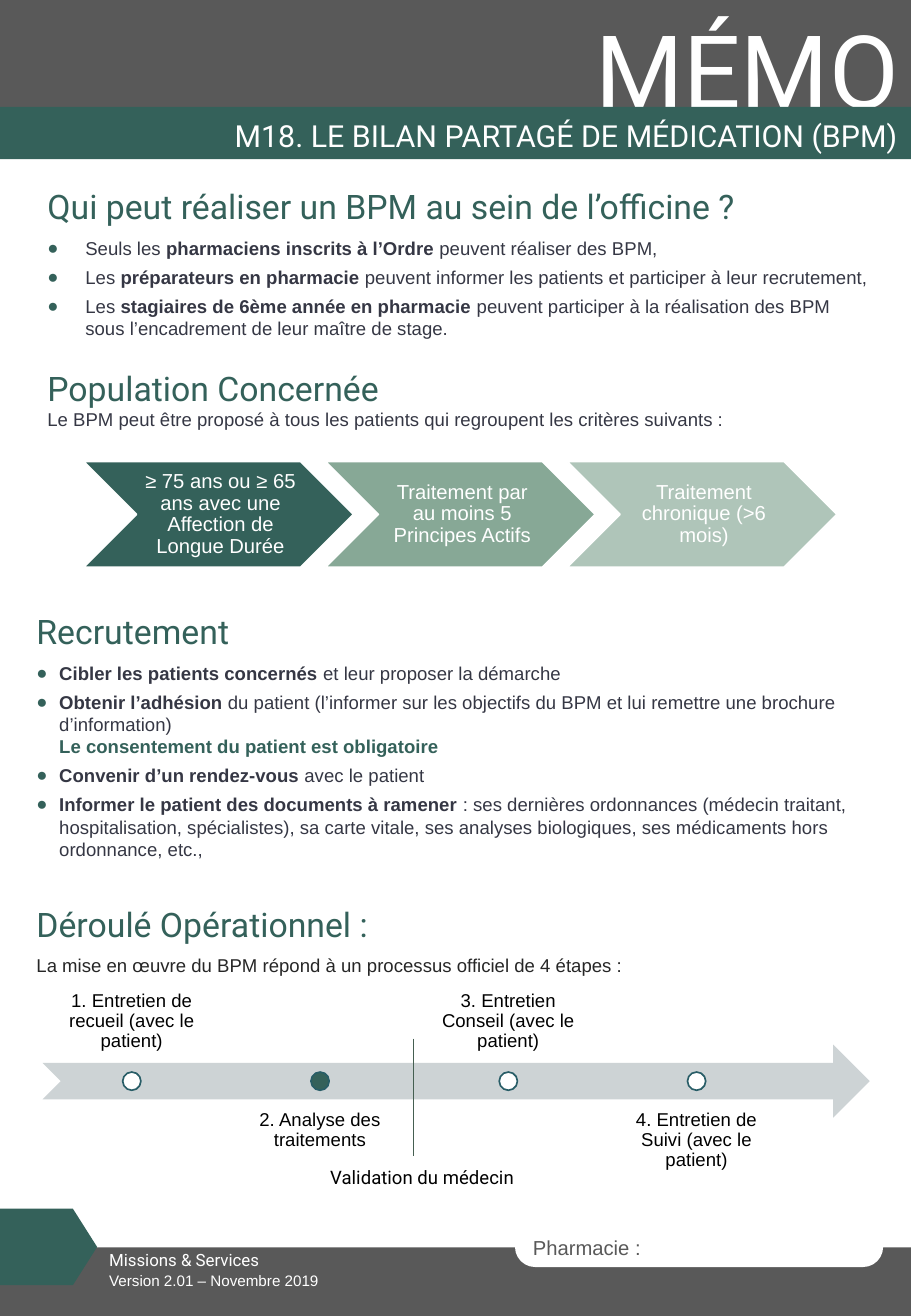
import pptx
import pptx.util
import pptx.dml.color
import pptx.enum.shapes
import pptx.enum.text
import pptx.oxml.ns
import lxml.etree

Pt = pptx.util.Pt
SHAPE = pptx.enum.shapes.MSO_SHAPE
ALIGN = pptx.enum.text.PP_ALIGN
ANCHOR = pptx.enum.text.MSO_ANCHOR
qn = pptx.oxml.ns.qn

COLORS = {
    "green": "34615A", "sage": "87A896", "mist": "AFC5B9", "gray": "595959",
    "arrow": "CDD3D5", "ring": "285D67", "divider": "455F51", "white": "FFFFFF",
    "ink": "353744", "dark": "262626", "black": "000000",
}
HEADING = dict(size=20, font="Roboto", color="green")

# Each section is a list of (kind, spans, space before, space after).
# A span is (words, style); the style "" is plain, "b" bold, "g" bold green.
WHO_AND_WHOM = [
    ("heading", [("Qui peut réaliser un BPM au sein de l’officine ?", "")], 0, 6),
    ("bullet", [("Seuls les ", ""), ("pharmaciens inscrits à l’Ordre ", "b"),
                ("peuvent réaliser des BPM,", "")], 0, 4),
    ("bullet", [("Les ", ""), ("préparateurs en pharmacie ", "b"),
                ("peuvent informer les patients et participer à leur recrutement,", "")], 0, 4),
    ("bullet", [("Les ", ""), ("stagiaires de 6ème année en pharmacie ", "b"),
                ("peuvent participer à la réalisation des BPM sous l’encadrement "
                 "de leur maître de stage.", "")], 0, 4),
    ("heading", [("Population Concernée", "")], 13, 0),
    ("ink", [("Le BPM peut être proposé à tous les patients qui regroupent "
              "les critères suivants :", "")], 0, 0),
]
RECRUITMENT = [
    ("heading", [("Recrutement", "")], 0, 6),
    ("bullet", [("Cibler les patients concernés ", "b"),
                ("et leur proposer la démarche", "")], 0, 4),
    ("bullet", [("Obtenir l’adhésion ", "b"),
                ("du patient (l’informer sur les objectifs du BPM et lui remettre "
                 "une brochure d’information)", ""), None,
                ("Le consentement du patient est obligatoire", "g")], 0, 4),
    ("bullet", [("Convenir d’un rendez-vous ", "b"), ("avec le patient", "")], 0, 4),
    ("bullet", [("Informer le patient des documents à ramener ", "b"),
                (": ses dernières ordonnances (médecin traitant, hospitalisation, "
                 "spécialistes), sa carte vitale, ses analyses biologiques, ses "
                 "médicaments hors ordonnance, etc.,", "")], 0, 4),
    ("heading", [("Déroulé Opérationnel :", "")], 21.5, 6),
    ("dark", [("La mise en œuvre du BPM répond à un processus officiel de 4 étapes :", "")], 0, 0),
]
CRITERIA = [
    ("≥ 75 ans ou ≥ 65 ans avec une Affection de Longue Durée", "green"),
    ("Traitement par au moins 5 Principes Actifs", "sage"),
    ("Traitement chronique (>6 mois)", "mist"),
]
STEPS = [
    ("1. Entretien de recueil (avec le patient)", "white"),
    ("2. Analyse des traitements", "green"),
    ("3. Entretien Conseil (avec le patient)", "white"),
    ("4. Entretien de Suivi (avec le patient)", "white"),
]


def rgb(name):
    return pptx.dml.color.RGBColor.from_string(COLORS[name])


def add_span(para, words, size, font, color, bold=False):
    span = para.add_run()
    span.text = words
    span.font.size, span.font.name, span.font.bold = Pt(size), font, bold
    span.font.color.rgb = rgb(color)


def write(shape, words, size, font, color, align=ALIGN.LEFT, anchor=ANCHOR.TOP,
          wrap=True, spacing=None, insets=(7.2, 3.6, 7.2, 3.6)):
    frame = shape.text_frame
    frame.word_wrap, frame.vertical_anchor = wrap, anchor
    frame.auto_size = pptx.enum.text.MSO_AUTO_SIZE.NONE
    frame.margin_left, frame.margin_top, frame.margin_right, frame.margin_bottom = map(Pt, insets)
    para = frame.paragraphs[0]
    para.alignment = align
    if spacing:
        para.line_spacing = spacing
    add_span(para, words, size, font, color)


def add_label(page, box, words, size, font, color, **options):
    write(page.shapes.add_textbox(*map(Pt, box)), words, size, font, color, **options)


def add_block(page, kind, box, fill, line=None, adjust=None):
    shape = page.shapes.add_shape(kind, *map(Pt, box))
    shape.shadow.inherit = False
    shape.fill.solid()
    shape.fill.fore_color.rgb = rgb(fill)
    if line:
        shape.line.color.rgb = rgb(line)
        shape.line.width = Pt(1)
    else:
        shape.line.fill.background()
    if adjust is not None:
        shape.adjustments[0] = adjust
    return shape


def place(shape, box):
    shape.left, shape.top, shape.width, shape.height = map(Pt, box)


def set_bullet(para, indent):
    props = para._p.get_or_add_pPr()
    props.set("marL", str(Pt(indent)))
    props.set("indent", str(-Pt(indent)))
    if indent:
        color = lxml.etree.SubElement(props, qn("a:buClr"))
        lxml.etree.SubElement(color, qn("a:srgbClr")).set("val", COLORS["green"])
        lxml.etree.SubElement(props, qn("a:buChar")).set("char", "●")
    else:
        lxml.etree.SubElement(props, qn("a:buNone"))


def fill_section(body, box, content, indent):
    place(body, box)
    frame = body.text_frame
    frame.word_wrap = True
    frame.auto_size = pptx.enum.text.MSO_AUTO_SIZE.NONE
    for index, (kind, spans, before, after) in enumerate(content):
        para = frame.add_paragraph() if index else frame.paragraphs[0]
        set_bullet(para, indent if kind == "bullet" else 0)
        para.space_before, para.space_after = Pt(before), Pt(after)
        for span in spans:
            if span is None:
                para.add_line_break()
            elif kind == "heading":
                add_span(para, span[0], **HEADING)
            else:
                words, style = span
                color = "green" if style == "g" else "dark" if kind == "dark" else "ink"
                add_span(para, words, 11, "Arial", color, bool(style))


def draw_header(page, box):
    left, top, width, height = box
    band = 31
    add_block(page, SHAPE.RECTANGLE, (left, top, width, height - band), "gray")
    add_label(page, (left + width - 206.6, top + 0.7, 206.6, 80), "MÉMO", 60, "Roboto", "white",
              align=ALIGN.RIGHT, wrap=False)
    add_block(page, SHAPE.RECTANGLE, (left, top + height - band, width, band), "green")
    title = page.shapes.title
    title.element.getparent().append(title.element)  # in front of the band
    place(title, (left + 16.6, top + height - 26, width - 17.3, 26.6))
    write(title, "M18. LE BILAN PARTAGÉ DE MÉDICATION (BPM)", 18, "Roboto", "white",
          align=ALIGN.RIGHT, anchor=ANCHOR.MIDDLE, spacing=0.9)


def draw_footer(page, box):
    left, top, width, height = box
    add_block(page, SHAPE.RECTANGLE, (left, top + 23, width, height - 23), "gray")
    field = add_block(page, SHAPE.ROUNDED_RECTANGLE,
                      (left + 305.3, top + 10.8, 218.2, 23.8), "white", adjust=0.5)
    write(field, "Pharmacie :", 12, "Arial", "gray", anchor=ANCHOR.MIDDLE)
    add_block(page, SHAPE.PENTAGON, (left, top, 57.6, 45.4), "green", adjust=0.317)
    add_label(page, (left + 57.6, top + 20.9, 138.2, 19.4), "Missions & Services",
              10, "Roboto", "white")
    add_label(page, (left + 57.6, top + 33.8, 423.4, 18), "Version 2.01 – Novembre 2019",
              9, "Arial", "white")


def draw_criteria(page, box):
    left, top, width, height = box
    chevron = 159.8
    step = (width - chevron) / (len(CRITERIA) - 1)
    for index, (words, fill) in enumerate(CRITERIA):
        start = left + index * step
        add_block(page, SHAPE.CHEVRON, (start, top, chevron, height), fill, "white")
        add_label(page, (start + height / 2, top, chevron - height, height), words,
                  12, "Arial", "white", align=ALIGN.CENTER, anchor=ANCHOR.MIDDLE,
                  spacing=0.9, insets=(3.6, 1.4, 1.4, 1.4))


def draw_timeline(page, box):
    left, top, width, height = box
    label_width, label_height, step, dot = 105.8, 43.2, 111.6, 10.8
    middle = top + height / 2
    add_block(page, SHAPE.NOTCHED_RIGHT_ARROW,
              (left, middle - label_height / 2, width, label_height), "arrow")
    for index, (words, fill) in enumerate(STEPS):
        start = left + index * step
        above = index % 2 == 0
        label_top = top if above else top + height - label_height
        add_label(page, (start, label_top, label_width, label_height), words,
                  11, "Arial", "black", align=ALIGN.CENTER, spacing=0.9,
                  anchor=ANCHOR.BOTTOM if above else ANCHOR.TOP, insets=(6.5,) * 4)
        add_block(page, SHAPE.OVAL, (start + (label_width - dot) / 2, middle - dot / 2, dot, dot),
                  fill, "ring")
    # Physician's approval between steps 2 and 3
    cut = left + 219.6
    divider = page.shapes.add_connector(pptx.enum.shapes.MSO_CONNECTOR.STRAIGHT,
                                        *map(Pt, (cut, top + 28.8, cut, top + 98.6)))
    divider.line.color.rgb = rgb("divider")
    divider.line.width = Pt(0.5)
    lxml.etree.SubElement(divider.element.spPr, qn("a:effectLst"))
    add_label(page, (cut - 59, top + 100.8, 128.9, 20.9), "Validation du médecin",
              11, "Roboto", "black", align=ALIGN.CENTER, wrap=False)


def main():
    deck = pptx.Presentation()
    deck.slide_width, deck.slide_height = Pt(540), Pt(780)
    page = deck.slides.add_slide(deck.slide_layouts[3])
    draw_header(page, (0, 0, 540, 94.4))
    draw_footer(page, (0, 716.4, 540, 63.6))
    fill_section(page.placeholders[1], (20.9, 106.6, 502.6, 167), WHO_AND_WHOM, 22.5)
    draw_criteria(page, (49.7, 273.6, 446.4, 62.6))
    fill_section(page.placeholders[2], (14.4, 358.6, 502.6, 226), RECRUITMENT, 13.5)
    draw_timeline(page, (25.2, 586.8, 490.3, 108))
    deck.save("out.pptx")


if __name__ == "__main__":
    main()
